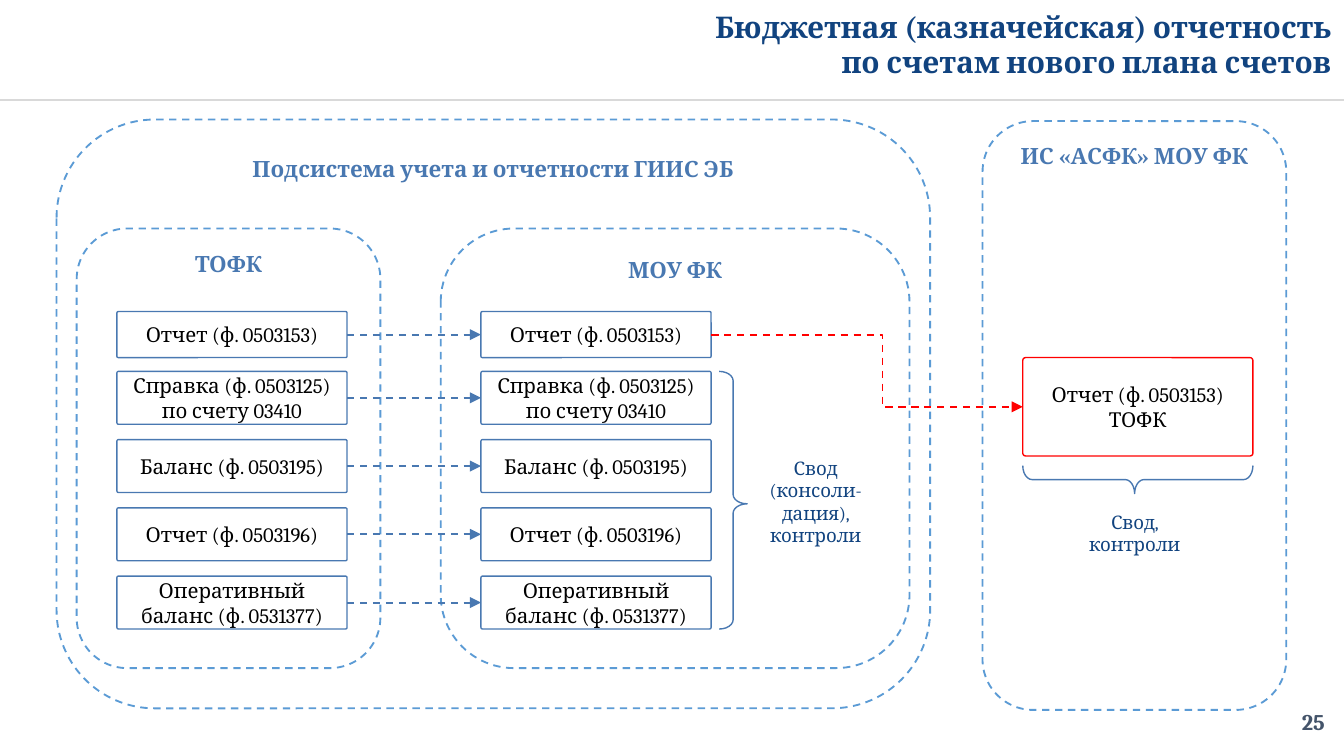
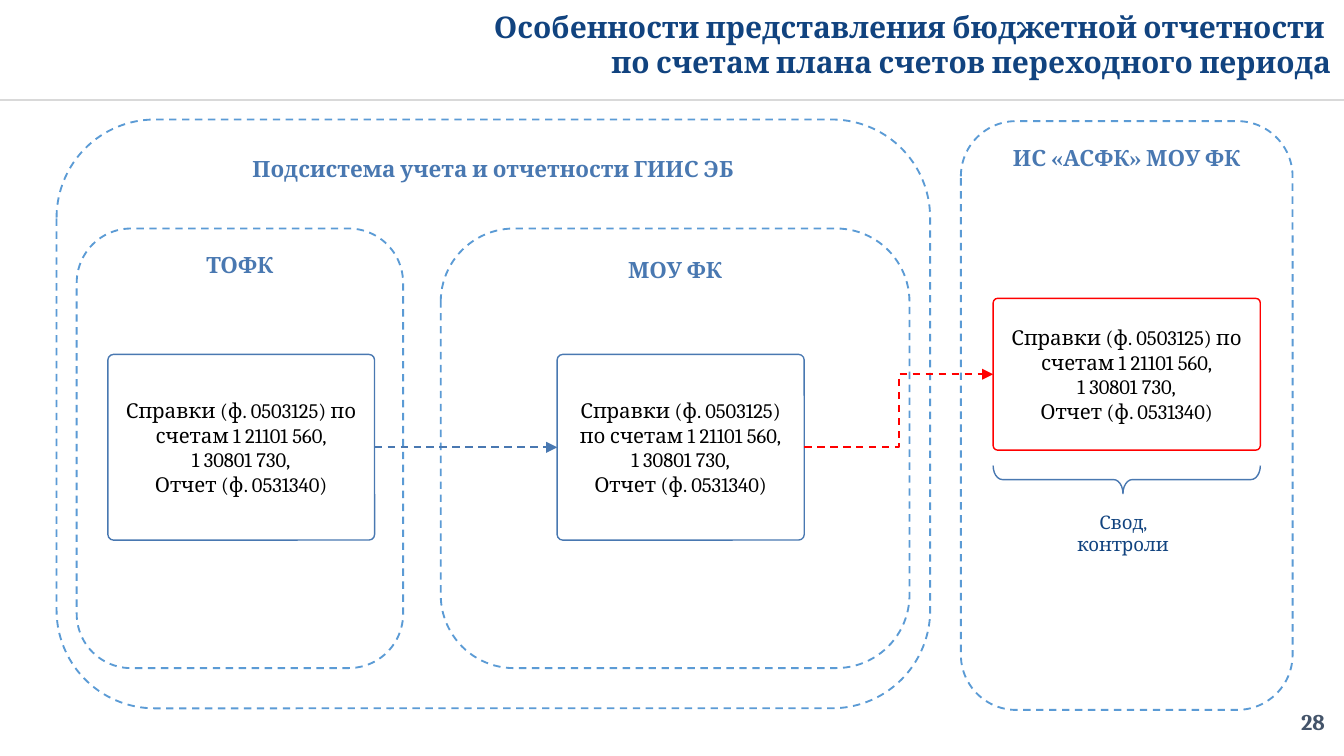
from dataclasses import dataclass

from lxml.etree import SubElement
from pptx import Presentation
from pptx.dml.color import RGBColor
from pptx.enum.dml import MSO_LINE
from pptx.enum.shapes import MSO_CONNECTOR as LINK, MSO_SHAPE as SHAPE
from pptx.enum.text import MSO_ANCHOR as ANCHOR, MSO_AUTO_SIZE as FIT, PP_ALIGN as ALIGN
from pptx.oxml.ns import qn
from pptx.util import Cm, Pt


@dataclass(frozen=True)
class Style:
    """Type size, colour and weight of a text."""
    size: float
    color: str
    bold: bool = False


@dataclass(frozen=True)
class Theme:
    """Colours, type styles and line widths of the deck."""
    font: str = "Cambria"
    white: str = "FFFFFF"
    rule: str = "D9D9D9"
    panel: str = "5B9BD5"
    blue: str = "4978B1"
    red: str = "FF0000"
    title: Style = Style(16, "11437F", True)
    heading: Style = Style(12, "4978B1", True)
    form: Style = Style(11, "000000")
    note: Style = Style(10, "11437F")
    number: Style = Style(12, "44546A", True)
    thin: float = 0.75
    medium: float = 1


@dataclass(frozen=True)
class Box:
    """A rectangle in centimetres."""
    left: float
    top: float
    width: float
    height: float

    def inside(self, dx, dy, width, height):
        """Return a box offset from this one's top left corner."""
        return Box(self.left + dx, self.top + dy, width, height)

    def lengths(self):
        """Return left, top, width and height as lengths."""
        return Cm(self.left), Cm(self.top), Cm(self.width), Cm(self.height)


THEME = Theme()
WIDTH, HEIGHT = 25.4, 14.29
TITLE = Box(7.7, 0.03, 17.73, 1.63)
NUMBER = Box(19.2, 13.39, 5.84, 0.51)
RULE_TOP = 1.89
SUBSYSTEM = Box(1.07, 2.26, 16.51, 11.13)
CENTRE = Box(8.33, 4.32, 8.86, 8.31)
BRACE_DEPTH = 0.53
BRACE_TIP = 0.486

FORMS = [
    "Отчет (ф. 0503153)",
    "Справка (ф. 0503125) по счету 03410",
    "Баланс (ф. 0503195)",
    "Отчет (ф. 0503196)",
    "Оперативный баланс (ф. 0531377)",
]
CERTIFICATES = [
    "Справки (ф. 0503125) по счетам 1 21101 560,",
    "1 30801 730,",
    "Отчет (ф. 0531340)",
]


def write(frame, lines, style, align=ALIGN.CENTER, anchor=ANCHOR.TOP):
    """Fill a text frame with one paragraph per line."""
    frame.word_wrap = True
    frame.auto_size = FIT.NONE
    frame.vertical_anchor = anchor
    for index, line in enumerate(lines):
        para = frame.add_paragraph() if index else frame.paragraphs[0]
        para.alignment = align
        span = para.add_run()
        span.text = line
        span.font.name = THEME.font
        span.font.size = Pt(style.size)
        span.font.bold = style.bold
        span.font.color.rgb = RGBColor.from_string(style.color)


def stroke(line, color, width, dashed=False):
    """Set the colour, width and dash of a line."""
    line.color.rgb = RGBColor.from_string(color)
    line.width = Pt(width)
    if dashed:
        line.dash_style = MSO_LINE.DASH


def add_outline(page, kind, box, color, width, dashed=False):
    """Add an unfilled preset shape without a shadow."""
    shape = page.shapes.add_shape(kind, *box.lengths())
    shape.shadow.inherit = False
    shape.fill.background()
    stroke(shape.line, color, width, dashed)
    return shape


def add_panel(page, box, heading):
    """Add a dashed white system panel headed by its name."""
    panel = add_outline(page, SHAPE.ROUNDED_RECTANGLE, box, THEME.panel, THEME.medium, True)
    panel.fill.solid()
    panel.fill.fore_color.rgb = RGBColor.from_string(THEME.white)
    write(panel.text_frame, [heading], THEME.heading)


def add_form(page, box, lines, color=THEME.blue):
    """Add a framed report form."""
    form = add_outline(page, SHAPE.ROUNDED_RECTANGLE, box, color, THEME.thin)
    form.adjustments[0] = 0.03
    write(form.text_frame, lines, THEME.form, anchor=ANCHOR.MIDDLE)
    return form


def add_line(page, kind, ends, color, dashed=False):
    """Add a connector without a shadow."""
    line = page.shapes.add_connector(kind, *ends)
    stroke(line.line, color, THEME.medium, dashed)
    SubElement(line._element.spPr, qn("a:effectLst"))
    return line


def add_arrow(page, source, target, color=THEME.blue, bend=None):
    """Join the right side of one form to the left side of another."""
    ends = (source.left + source.width, source.top + source.height // 2,
            target.left, target.top + target.height // 2)
    kind = LINK.STRAIGHT if bend is None else LINK.ELBOW
    arrow = add_line(page, kind, ends, color, True)
    arrow.begin_connect(source, 3)
    arrow.end_connect(target, 1)
    SubElement(arrow.line._get_or_add_ln(), qn("a:tailEnd"), type="triangle")
    if bend is not None:
        guides = arrow._element.spPr.find(qn("a:prstGeom")).get_or_add_avLst()
        SubElement(guides, qn("a:gd"), name="adj1", fmla=f"val {round(bend * 100000)}")


def add_brace(page, box, turn):
    """Add a left brace turned by the given angle."""
    brace = add_outline(page, SHAPE.LEFT_BRACE, box, THEME.blue, THEME.thin)
    brace.adjustments[0] = 0.333
    brace.adjustments[1] = BRACE_TIP
    brace.rotation = turn


def add_note(page, box, text):
    """Add a centred note beside a brace."""
    note = page.shapes.add_textbox(*box.lengths())
    write(note.text_frame, [text], THEME.note)


def add_summary(page, box, top=8.8):
    """Add the downward brace and its note below a report box."""
    middle = box.left + box.width / 2
    centre = top + BRACE_DEPTH / 2
    add_brace(page, Box(middle - BRACE_DEPTH / 2, centre - box.width / 2,
                        BRACE_DEPTH, box.width), 270)
    tip = box.left + box.width * BRACE_TIP
    add_note(page, Box(tip - 1.5, top + 0.73, 3, 1.1), "Свод, контроли")


def add_page(deck, title, number):
    """Add a page with its title, header rule and number."""
    page = deck.slides.add_slide(deck.slide_layouts[5])
    heading = page.shapes.title
    heading.left, heading.top, heading.width, heading.height = TITLE.lengths()
    write(heading.text_frame, title, THEME.title, ALIGN.RIGHT)
    add_line(page, LINK.STRAIGHT, (0, Cm(RULE_TOP), Cm(WIDTH), Cm(RULE_TOP)), THEME.rule)
    frame = page.shapes.add_textbox(*NUMBER.lengths()).text_frame
    frame.margin_left = frame.margin_right = frame.margin_top = frame.margin_bottom = 0
    write(frame, [number], THEME.number, ALIGN.RIGHT, ANCHOR.MIDDLE)
    return page


def add_systems(page, office, treasury):
    """Add the panels of the four systems."""
    add_panel(page, SUBSYSTEM, "Подсистема учета и отчетности ГИИС ЭБ")
    add_panel(page, treasury, "ИС «АСФК» МОУ ФК")
    add_panel(page, CENTRE, "МОУ ФК")
    add_panel(page, office, "ТОФК")


def add_form_column(page, panel):
    """Stack the five report forms inside a panel."""
    boxes = [panel.inside(0.76, 1.57, 4.35, 0.87)]
    boxes += [panel.inside(0.76, 2.7 + 1.29 * row, 4.35, 1) for row in range(len(FORMS) - 1)]
    return [add_form(page, box, [text]) for box, text in zip(boxes, FORMS)]


def build_new_accounts(deck):
    """Build the page on reports for the new chart of accounts."""
    page = add_page(deck, ["Бюджетная (казначейская) отчетность",
                           "по счетам нового плана счетов"], "25")
    office = Box(1.45, 4.32, 5.74, 8.31)
    treasury = Box(18.57, 2.29, 5.74, 11.13)
    add_systems(page, office, treasury)
    sent = add_form_column(page, office)
    received = add_form_column(page, CENTRE)
    for source, target in zip(sent, received):
        add_arrow(page, source, target)
    report_box = treasury.inside(0.76, 4.47, 4.35, 1.86)
    report = add_form(page, report_box, ["Отчет (ф. 0503153) ТОФК"], THEME.red)
    add_arrow(page, received[0], report, THEME.red, 0.55)
    add_brace(page, CENTRE.inside(5.26, 2.7, BRACE_DEPTH, 4.87), 180)
    add_note(page, CENTRE.inside(5.74, 4.19, 2.69, 1.96), "Свод (консоли-дация), контроли")
    add_summary(page, report_box)


def build_transition(deck):
    """Build the page on reports for the transition period."""
    page = add_page(deck, ["Особенности представления бюджетной отчетности ",
                           "по счетам плана счетов переходного периода"], "28")
    office = Box(1.45, 4.32, 6.17, 8.31)
    treasury = Box(18.16, 2.29, 6.27, 11.13)
    add_systems(page, office, treasury)
    sent = add_form(page, office.inside(0.59, 2.38, 5.04, 3.51), CERTIFICATES)
    received = add_form(page, CENTRE.inside(2.2, 2.38, 4.67, 3.51), CERTIFICATES)
    add_arrow(page, sent, received)
    report_box = treasury.inside(0.61, 3.35, 5.05, 2.87)
    report = add_form(page, report_box, CERTIFICATES, THEME.red)
    add_arrow(page, received, report, THEME.red, 0.5)
    add_summary(page, report_box)


def main():
    """Build and save the deck."""
    deck = Presentation()
    deck.slide_width, deck.slide_height = Cm(WIDTH), Cm(HEIGHT)
    build_new_accounts(deck)
    build_transition(deck)
    deck.save("out.pptx")


if __name__ == "__main__":
    main()
